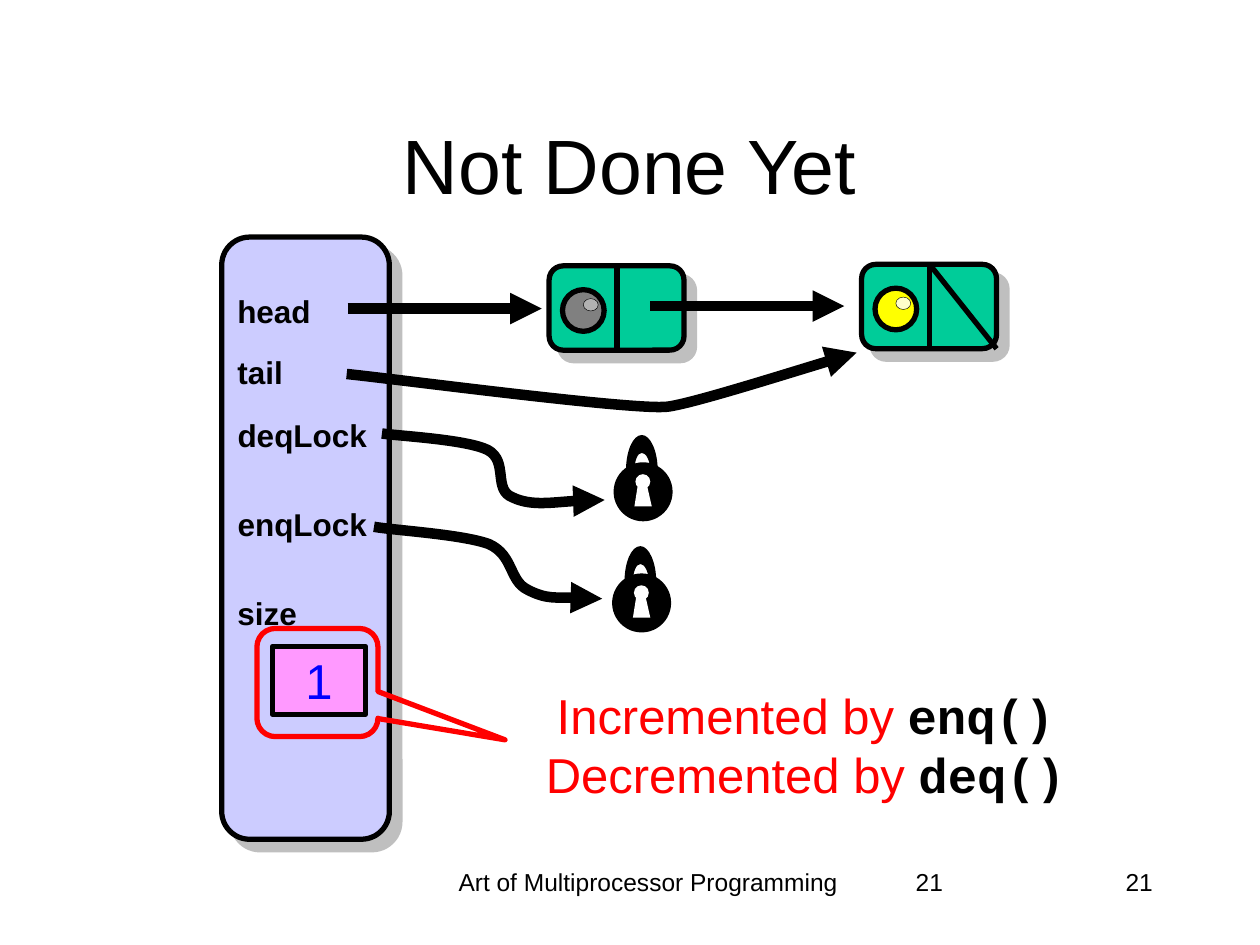
"""Build the "Not Done Yet" slide: a bounded queue with its two locks and size counter."""
from dataclasses import dataclass
from typing import NamedTuple, Optional

from lxml import etree
from pptx import Presentation
from pptx import util as u
from pptx.dml.color import RGBColor
from pptx.enum import shapes, text
from pptx.oxml.ns import qn

KIND = shapes.MSO_SHAPE
ALIGN = text.PP_ALIGN


@dataclass(frozen=True)
class Theme:
    sans: str = "Arial"
    mono: str = "Courier New"
    title: int = 44
    body: int = 28
    label: int = 18
    footer: int = 14
    outline: float = 3
    arrow: float = 6
    hairline: float = 0.25
    black: str = "000000"
    white: str = "FFFFFF"
    red: str = "FF0000"
    blue: str = "0000FF"
    pink: str = "FF99FF"
    panel: str = "CCCCFF"
    node: str = "00CC99"
    shadow: str = "808080"


class Box(NamedTuple):
    x: float
    y: float
    w: float
    h: float


class Label(NamedTuple):
    words: str
    y: float
    w: float


class Node(NamedTuple):
    x: float
    y: float
    ball: str
    glint: str


class Curve(NamedTuple):
    kinds: str
    points: list


T = Theme()
LABEL_X, LABEL_H = 4.52, 1.02
NODE_W, NODE_H, NODE_SPLIT = 2.72, 1.7, 1.37

LABELS = [Label("head", 5.77, 2.01), Label("tail", 6.99, 1.45), Label("deqLock", 8.26, 3.15),
          Label("enqLock", 10.06, 3.15), Label("size", 11.86, 1.73)]
NODES = [Node(11.07, 5.36, "808080", "B2B2B2"), Node(17.37, 5.33, "FFFF00", "FFFFCC")]
LOCKS = [(12.34, 11.56), (12.37, 9.32)]
POINTERS = [
    Curve("CC", [(6.99, 7.54), (8.05, 7.65), (12.8, 8.28), (13.46, 8.2),
                 (13.97, 8.13), (16.48, 7.34), (17.27, 7.11)]),
    Curve("CCC", [(7.7, 8.74), (8.05, 8.79), (9.4, 8.86), (9.83, 9.07), (10.26, 9.3),
                  (9.93, 9.88), (10.34, 10.03), (10.72, 10.21), (11.81, 10.06), (12.19, 10.08)]),
    Curve("CCC", [(7.54, 10.62), (7.92, 10.69), (9.32, 10.77), (9.86, 10.97), (10.36, 11.2),
                  (10.26, 11.71), (10.64, 11.89), (11.02, 12.09), (11.81, 12.04), (12.14, 12.07)]),
]
KEYHOLE = Curve("LLL", [(0.42, 0.89), (0.49, 0.45), (0.67, 0.45), (0.77, 0.89)])
SHACKLE = Curve("CCLCC", [(0.42, 0.17), (0.42, -0.02), (0.48, -0.19), (0.57, -0.19),
                          (0.66, -0.19), (0.74, -0.02), (0.74, 0.17), (0.89, 0.17),
                          (0.89, -0.23), (0.74, -0.55), (0.57, -0.55),
                          (0.39, -0.55), (0.25, -0.23), (0.25, 0.17)])


def emu(values) -> list:
    """Convert centimetres to lengths."""
    return [u.Cm(v) for v in values]


def paint(sp, fill: Optional[str], line: Optional[str], width: float = T.outline) -> None:
    """Set fill and outline, and drop the theme shadow."""
    sp.shadow.inherit = False
    if fill:
        sp.fill.solid()
        sp.fill.fore_color.rgb = RGBColor.from_string(fill)
    else:
        sp.fill.background()
    if line:
        sp.line.color.rgb = RGBColor.from_string(line)
        sp.line.width = u.Pt(width)
    else:
        sp.line.fill.background()


def add_shape(parent, kind, box: Box, fill: Optional[str], line: Optional[str] = T.black,
              width: float = T.outline):
    """Add a preset shape."""
    sp = parent.add_shape(kind, *emu(box))
    paint(sp, fill, line, width)
    return sp


def cast_shadow(sp) -> None:
    """Give a shape a half-transparent shadow to the lower right."""
    effects = sp._element.spPr.find(qn("a:effectLst"))
    outer = etree.SubElement(effects, qn("a:outerShdw"), dist=str(u.Pt(8.5)), dir="2700000",
                             algn="ctr", rotWithShape="0")
    color = etree.SubElement(outer, qn("a:srgbClr"), val=T.shadow)
    etree.SubElement(color, qn("a:alpha"), val="50000")


def point_arrow(sp) -> None:
    """Put a triangle at the end of a line."""
    etree.SubElement(sp.line._get_or_add_ln(), qn("a:tailEnd"), type="triangle")


def add_line(parent, start: tuple, end: tuple, width: float = T.outline):
    """Add a straight black line."""
    s = parent.add_connector(shapes.MSO_CONNECTOR.STRAIGHT, *emu(start + end))
    s.line.color.rgb = RGBColor.from_string(T.black)
    s.line.width = u.Pt(width)
    etree.SubElement(s._element.spPr, qn("a:effectLst"))
    return s


def add_curve(parent, curve: Curve, origin: tuple = (0, 0), close: bool = False):
    """Add an outline whose kinds are L for a straight and C for a cubic segment."""
    points = [emu((origin[0] + x, origin[1] + y)) for x, y in curve.points]
    builder = parent.build_freeform(*points[0])
    builder.add_line_segments(points[1:], close=close)
    sp = builder.convert_to_shape()
    steps = iter(list(sp._element.iter(qn("a:lnTo"))))
    for kind in curve.kinds:
        first = next(steps)
        if kind == "C":
            first.tag = qn("a:cubicBezTo")
            for _ in range(2):
                step = next(steps)
                first.append(step[0])
                step.getparent().remove(step)
    return sp


def style(font, size: Optional[int] = None, color: str = T.black, bold: bool = False,
          name: str = T.sans) -> None:
    """Format a paragraph or run font."""
    font.name, font.bold = name, bold
    font.color.rgb = RGBColor.from_string(color)
    if size:
        font.size = u.Pt(size)


def add_text(parent, box: Box, words: str, size: int, align=ALIGN.CENTER, bold: bool = False,
             wrap: bool = True) -> None:
    """Add a one-paragraph text box."""
    tf = parent.add_textbox(*emu(box)).text_frame
    tf.word_wrap = wrap
    p = tf.paragraphs[0]
    p.text, p.alignment = words, align
    style(p.font, size, bold=bold)


def add_node(parent, node: Node) -> None:
    """Add a list node with its item."""
    grp = parent.add_group_shape().shapes
    x, y = node.x, node.y
    cast_shadow(add_shape(grp, KIND.ROUNDED_RECTANGLE, Box(x, y, NODE_W, NODE_H), T.node))
    add_line(grp, (x + NODE_SPLIT, y), (x + NODE_SPLIT, y + NODE_H))
    add_shape(grp, KIND.OVAL, Box(x + 0.27, y + 0.48, 0.84, 0.84), node.ball)
    add_shape(grp, KIND.OVAL, Box(x + 0.69, y + 0.66, 0.3, 0.25), node.glint, width=T.hairline)


def add_lock(parent, x: float, y: float) -> None:
    """Add a padlock."""
    grp = parent.add_group_shape().shapes
    add_shape(grp, KIND.OVAL, Box(x, y, 1.19, 1.19), T.black, None)
    add_shape(grp, KIND.OVAL, Box(x + 0.44, y + 0.24, 0.3, 0.3), T.white, None)
    for curve, fill in ((KEYHOLE, T.white), (SHACKLE, T.black)):
        paint(add_curve(grp, curve, (x, y), close=True), fill, None)


def add_caption(parent) -> None:
    """Add the two lines that say who changes the size."""
    tf = parent.add_textbox(*emu(Box(8.15, 13.69, 16.18, 2.64))).text_frame
    tf.word_wrap = True
    for i, (words, call) in enumerate((("Incremented by ", "enq()"), ("Decremented by ", "deq()"))):
        p = tf.add_paragraph() if i else tf.paragraphs[0]
        p.alignment = ALIGN.CENTER
        p.font.size = u.Pt(T.body)
        for run_text, look in ((words, dict(color=T.red)), (call, dict(bold=True, name=T.mono))):
            r = p.add_run()
            r.text = run_text
            style(r.font, **look)


def add_counter(parent) -> None:
    """Add the size value and the callout around it."""
    callout = add_shape(parent, KIND.ROUNDED_RECTANGULAR_CALLOUT, Box(5.18, 12.67, 2.44, 2.18),
                        None, T.red)
    for i, value in enumerate((1.55, 0.53, 0.17)):
        callout.adjustments[i] = value
    tf = add_shape(parent, KIND.RECTANGLE, Box(5.49, 13.03, 1.88, 1.37), T.pink).text_frame
    tf.word_wrap, tf.vertical_anchor = False, text.MSO_ANCHOR.MIDDLE
    p = tf.paragraphs[0]
    p.text, p.alignment = "1", ALIGN.CENTER
    style(p.font, T.body, T.blue)


def main() -> None:
    """Build and save the slide."""
    prs = Presentation()
    prs.slide_width, prs.slide_height = emu((25.4, 19.05))
    s = prs.slides.add_slide(prs.slide_layouts[5])
    title, parent = s.shapes.title, s.shapes
    title.left, title.top, title.width, title.height = emu(Box(1.9, 1.7, 21.59, 3.18))
    title.text_frame.vertical_anchor = text.MSO_ANCHOR.MIDDLE
    p = title.text_frame.paragraphs[0]
    p.text, p.alignment = "Not Done Yet", ALIGN.CENTER
    style(p.font, T.title)

    cast_shadow(add_shape(parent, KIND.ROUNDED_RECTANGLE, Box(4.47, 4.78, 3.38, 12.14), T.panel))
    add_text(parent, Box(8.69, 17.35, 8.76, 1.27), "Art of Multiprocessor Programming", T.footer)
    for align in (ALIGN.LEFT, ALIGN.RIGHT):
        add_text(parent, Box(18.21, 17.35, 5.28, 1.27), "21", T.footer, align)
    for label in LABELS:
        add_text(parent, Box(LABEL_X, label.y, label.w, LABEL_H), label.words, T.label,
                 bold=True, wrap=False)
    for node in NODES:
        add_node(parent, node)
    last = NODES[-1]
    add_line(parent, (last.x + NODE_SPLIT, last.y), (last.x + NODE_W, last.y + NODE_H))
    for x, y in ((7.01, 6.22), (13.11, 6.17)):
        point_arrow(add_line(parent, (x, y), (x + 3.91, y), T.arrow))
    for pointer in POINTERS:
        sp = add_curve(parent, pointer)
        paint(sp, None, T.black, T.arrow)
        point_arrow(sp)
    add_caption(parent)
    add_counter(parent)
    for x, y in LOCKS:
        add_lock(parent, x, y)
    prs.save("out.pptx")


if __name__ == "__main__":
    main()
